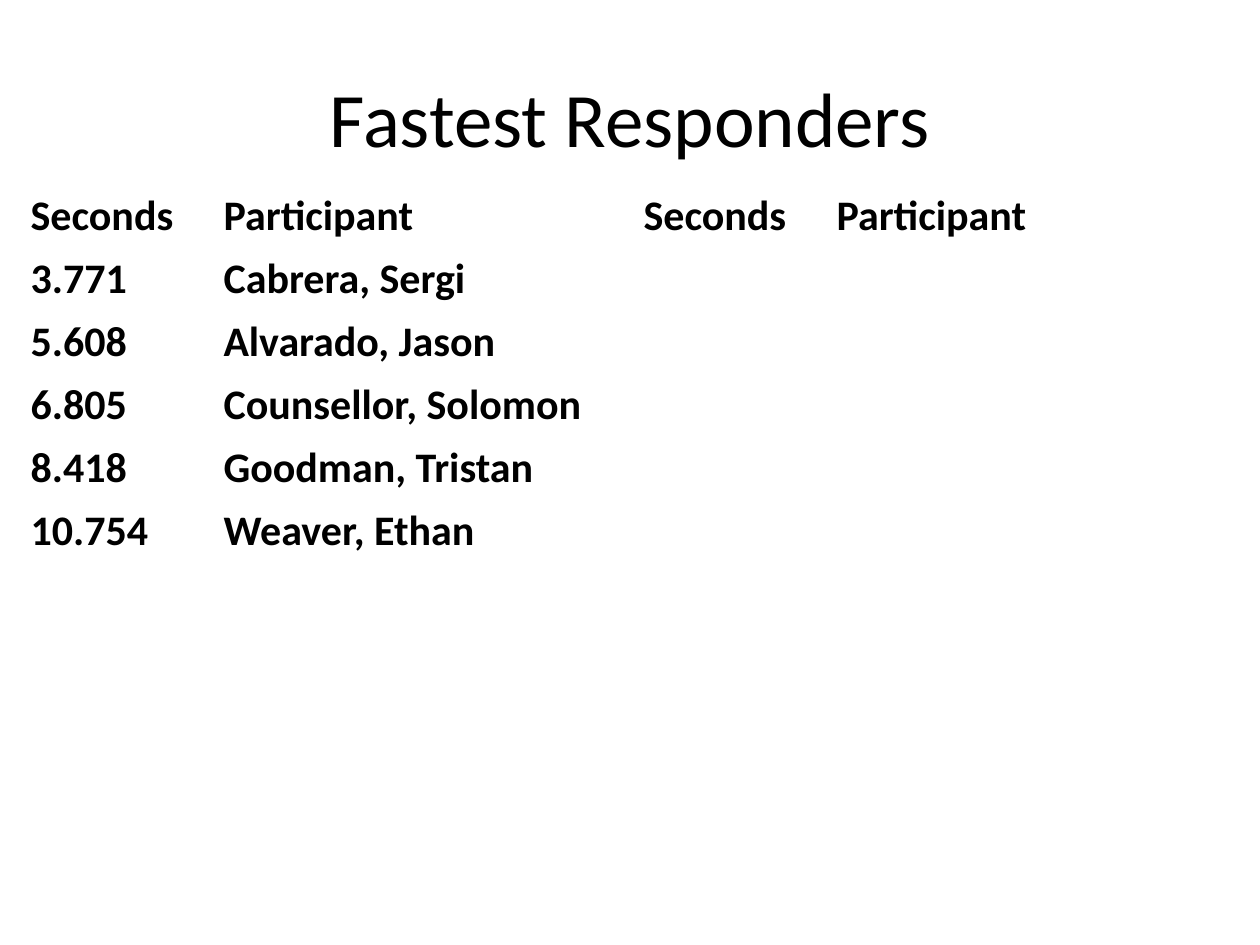
from dataclasses import dataclass

from lxml.etree import SubElement
from pptx import Presentation
from pptx.dml.color import RGBColor
from pptx.enum.text import MSO_ANCHOR, PP_ALIGN
from pptx.oxml.ns import qn
from pptx.util import Pt

EMU_PER_PX = 914400 / 126


def px(length):
    return round(length * EMU_PER_PX)


@dataclass(frozen=True)
class Theme:
    font: str = "Calibri"
    ink: str = "000000"
    paper: str = "FFFFFF"
    title_size: int = 44
    table_size: int = 24
    border: int = 1
    last_border: int = 3


def write_text(frame, text, *, theme, size, bold=False, align=PP_ALIGN.LEFT):
    para = frame.paragraphs[0]
    para.alignment = align
    span = para.add_run()
    span.text = text
    span.font.name = theme.font
    span.font.size = Pt(size)
    span.font.bold = bold
    span.font.color.rgb = RGBColor.from_string(theme.ink)


class SlideBuilder:
    """Draws themed elements on the current slide."""

    def __init__(self, slide, theme):
        self.slide = slide
        self.theme = theme

    def title(self, text, left, top, width, height):
        box = self.slide.shapes.add_textbox(px(left), px(top), px(width), px(height))
        frame = box.text_frame
        frame.word_wrap = True
        frame.vertical_anchor = MSO_ANCHOR.MIDDLE
        write_text(frame, text, theme=self.theme, size=self.theme.title_size,
                   align=PP_ALIGN.CENTER)

    def style_cell(self, cell, bottom):
        properties = cell._tc.get_or_add_tcPr()
        widths = {"L": self.theme.border, "R": self.theme.border,
                  "T": self.theme.border, "B": bottom}
        for side, width in widths.items():
            line = SubElement(properties, qn(f"a:ln{side}"), w=str(Pt(width)))
            fill = SubElement(line, qn("a:solidFill"))
            SubElement(fill, qn("a:srgbClr"), val=self.theme.paper)
        cell.fill.solid()
        cell.fill.fore_color.rgb = RGBColor.from_string(self.theme.paper)

    def table(self, records, row_count, left, top, height, column_widths, row_height):
        holder = self.slide.shapes.add_table(
            row_count, len(column_widths), px(left), px(top),
            px(sum(column_widths)), px(height))
        table = holder.table
        table.horz_banding = False
        for column, width in zip(table.columns, column_widths):
            column.width = px(width)
        for index, row in enumerate(table.rows):
            row.height = px(row_height)
            is_last = index == row_count - 1
            bottom = self.theme.last_border if is_last else self.theme.border
            for cell in row.cells:
                self.style_cell(cell, bottom)
        for row, record in zip(table.rows, records):
            for cell, text in zip(row.cells, record):
                write_text(cell.text_frame, text, theme=self.theme,
                           size=self.theme.table_size, bold=True)
        holder.height = px(height)


def main():
    deck = Presentation()
    deck.slide_width, deck.slide_height = px(1260), px(945)
    page = deck.slides.add_slide(deck.slide_layouts[6])
    builder = SlideBuilder(page, Theme())
    builder.title("Fastest Responders", 63, 38, 1134, 158)
    records = [
        ("Seconds", "Participant") * 2,
        ("3.771", "Cabrera, Sergi"),
        ("5.608", "Alvarado, Jason"),
        ("6.805", "Counsellor, Solomon"),
        ("8.418", "Goodman, Tristan"),
        ("10.754", "Weaver, Ethan"),
    ]
    builder.table(records, row_count=11, left=18, top=184, height=693,
                  column_widths=(193, 420) * 2, row_height=44)
    deck.save("out.pptx")


if __name__ == "__main__":
    main()
